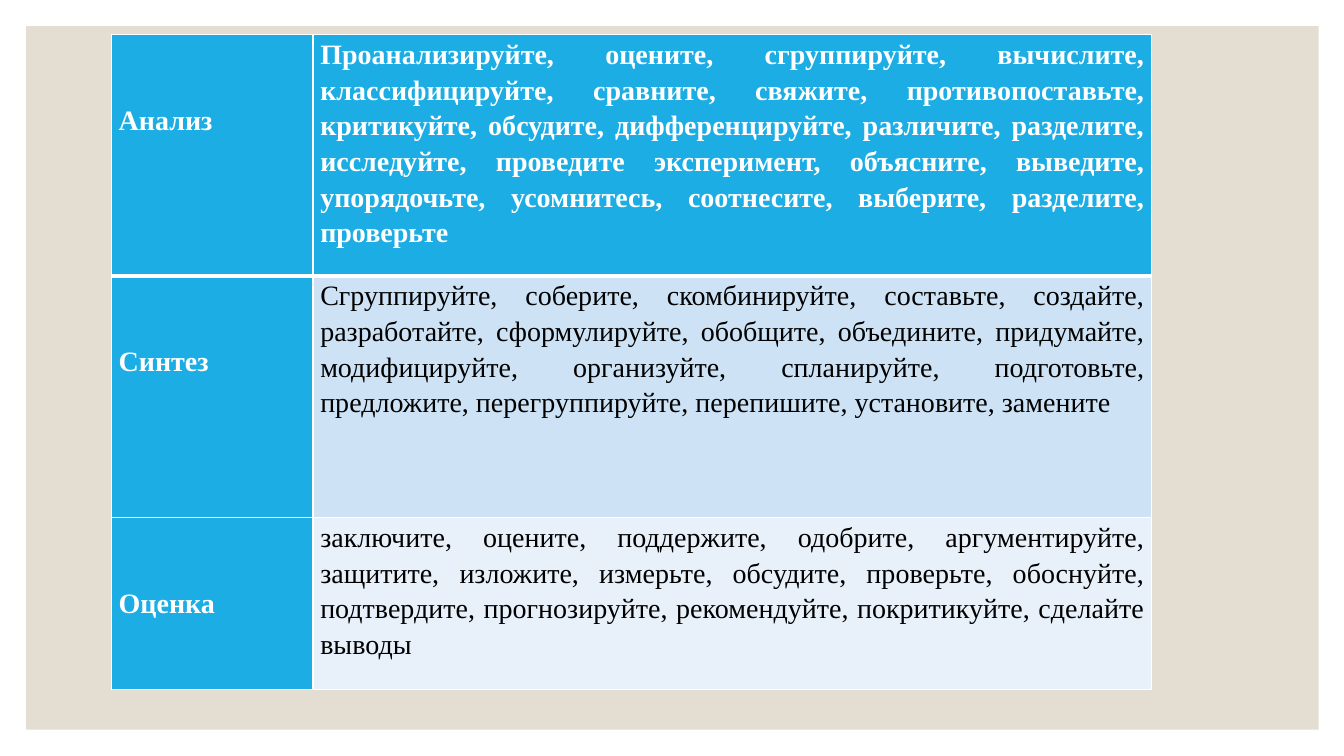
from lxml import etree
from pptx import Presentation
from pptx.dml.color import RGBColor
from pptx.enum.shapes import MSO_SHAPE
from pptx.enum.text import MSO_ANCHOR, PP_ALIGN
from pptx.oxml.ns import qn
from pptx.util import Emu, Pt

RECT = MSO_SHAPE.RECTANGLE
JUSTIFY = PP_ALIGN.JUSTIFY
TOP = MSO_ANCHOR.TOP

WHITE = RGBColor(0xFF, 0xFF, 0xFF)
BLACK = RGBColor(0x00, 0x00, 0x00)
BEIGE = RGBColor(0xE3, 0xDE, 0xD1)
BLUE = RGBColor(0x1C, 0xAD, 0xE4)
LIGHT_BLUE = RGBColor(0xCD, 0xE3, 0xF5)
PALE_BLUE = RGBColor(0xE8, 0xF1, 0xFA)

FONT = "Times New Roman"
PX = 9525  # EMU in one px, 96 px to the inch
SIDE_MARGIN = 7
LABEL_MARGIN = 65
COL_WIDTHS = (192, 799)

# label, verbs, row height, verb fill, verb colour, verb bold
ROWS = [
    ("Анализ",
     "Проанализируйте, оцените, сгруппируйте, вычислите, классифицируйте, "
     "сравните, свяжите, противопоставьте, критикуйте, обсудите, "
     "дифференцируйте, различите, разделите, исследуйте, проведите "
     "эксперимент, объясните, выведите, упорядочьте, усомнитесь, "
     "соотнесите, выберите, разделите, проверьте",
     230, BLUE, WHITE, True),
    ("Синтез",
     "Сгруппируйте, соберите, скомбинируйте, составьте, создайте, "
     "разработайте, сформулируйте, обобщите, объедините, придумайте, "
     "модифицируйте, организуйте, спланируйте, подготовьте, предложите, "
     "перегруппируйте, перепишите, установите, замените",
     230, LIGHT_BLUE, BLACK, False),
    ("Оценка",
     "заключите, оцените, поддержите, одобрите, аргументируйте, защитите, "
     "изложите, измерьте, обсудите, проверьте, обоснуйте, подтвердите, "
     "прогнозируйте, рекомендуйте, покритикуйте, сделайте выводы",
     164, PALE_BLUE, BLACK, False),
]


def px(n):
    return Emu(n * PX)


def add_frame(s, x, y, w, h):
    sp = s.shapes.add_shape(RECT, px(x), px(y), px(w), px(h))
    sp.shadow.inherit = False
    sp.fill.solid()
    sp.fill.fore_color.rgb = BEIGE
    sp.line.fill.background()


def set_borders(cell, top, bottom):
    tc_pr = cell._tc.get_or_add_tcPr()
    for side, width in (("L", 1), ("R", 1), ("T", top), ("B", bottom)):
        ln = etree.SubElement(tc_pr, qn("a:ln" + side), w=str(Pt(width)))
        fill = etree.SubElement(ln, qn("a:solidFill"))
        etree.SubElement(fill, qn("a:srgbClr"), val=str(WHITE))


def fill_cell(cell, text, fill, color, bold, spacing, margin_top=0):
    cell.fill.solid()
    cell.fill.fore_color.rgb = fill
    cell.vertical_anchor = TOP
    cell.margin_left = cell.margin_right = px(SIDE_MARGIN)
    cell.margin_top, cell.margin_bottom = px(margin_top), 0
    p = cell.text_frame.paragraphs[0]
    p.alignment = JUSTIFY
    p.line_spacing = spacing
    r = p.add_run()
    r.text = text
    r.font.name = FONT
    r.font.size = Pt(20)
    r.font.bold = bold
    r.font.color.rgb = color


def add_verb_table(s, x, y):
    height = sum(row[2] for row in ROWS)
    table = s.shapes.add_table(len(ROWS), len(COL_WIDTHS), px(x), px(y),
                               px(sum(COL_WIDTHS)), px(height)).table
    for col, width in zip(table.columns, COL_WIDTHS):
        col.width = px(width)
    for i, (label, verbs, h, fill, color, bold) in enumerate(ROWS):
        table.rows[i].height = px(h)
        label_cell, verb_cell = table.rows[i].cells
        # Thick rule between the first row and the second
        for cell in (label_cell, verb_cell):
            set_borders(cell, 3 if i == 1 else 1, 3 if i == 0 else 1)
        fill_cell(label_cell, label, BLUE, WHITE, True, 1.07, LABEL_MARGIN)
        fill_cell(verb_cell, verbs, fill, color, bold, 1.15)


def main():
    prs = Presentation()
    prs.slide_width, prs.slide_height = px(1280), px(720)
    s = prs.slides.add_slide(prs.slide_layouts[6])

    # Backdrop
    add_frame(s, 25, 25, 1231, 670)

    # Table of task verbs
    add_verb_table(s, 106, 33)

    prs.save("out.pptx")


if __name__ == "__main__":
    main()
